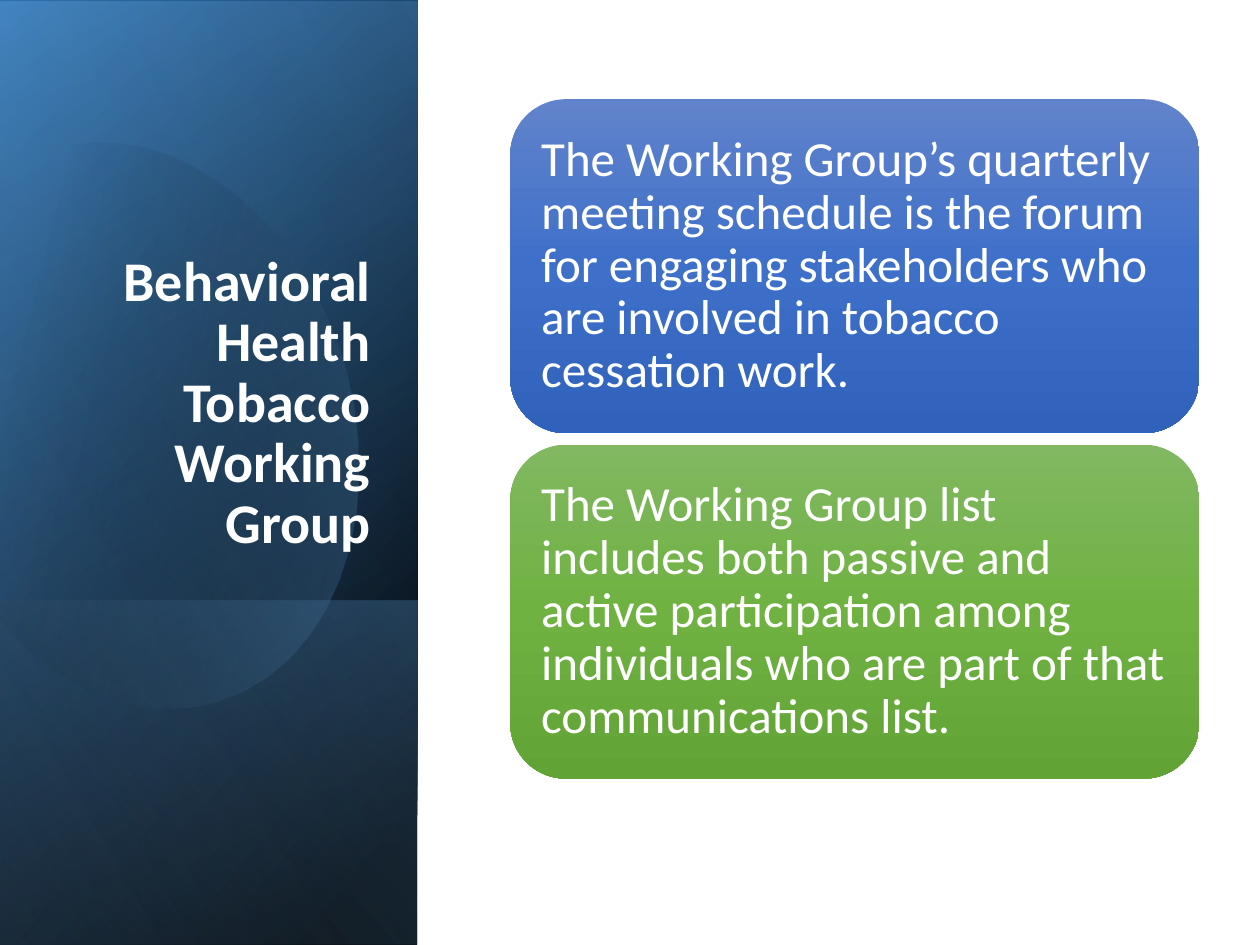
from math import cos, radians, sin

from pptx import Presentation
from pptx.dml.color import RGBColor
from pptx.enum.shapes import MSO_SHAPE
from pptx.enum.text import MSO_ANCHOR, MSO_AUTO_SIZE, PP_ALIGN
from pptx.oxml import parse_xml
from pptx.oxml.ns import nsdecls
from pptx.util import Pt

RECT, ROUND = MSO_SHAPE.RECTANGLE, MSO_SHAPE.ROUNDED_RECTANGLE
MIDDLE, BOTTOM = MSO_ANCHOR.MIDDLE, MSO_ANCHOR.BOTTOM
LEFT, RIGHT = PP_ALIGN.LEFT, PP_ALIGN.RIGHT
FIXED = MSO_AUTO_SIZE.NONE

HUES = {
    "black": "000000", "deep": "2E75B6", "sky": "5B9BD5", "pale": "9DC3E6",
    "white": "FFFFFF",
    "blue1": "6183CB", "blue2": "3E70CA", "blue3": "3062BB",
    "green1": "81B861", "green2": "6FB242", "green3": "62A336",
}
PANELS = [
    ((0, 0, 238.5, 540), [(8, "black", 100), (100, "deep", 100)], 50),
    ((0, 1, 238.5, 540), [(0, "black", 0), (99, "sky", 46)], 30),
    ((0, 343, 238.5, 197), [(2, "sky", 29), (100, "black", 30)], 130),
]
GLOSS = ((0, 0, 238.5, 540), [(0, "black", 0), (99, "pale", 11)], 120)
LEAF = [
    [(69, 82), (123, 88), (176, 138), (197, 209)],
    [(197, 209), (221, 297), (189, 382), (123, 401)],
    [(123, 401), (82, 413), (38, 396), (5, 360)],
    [(5, 360), (-2, 351)],
    [(-2, 351), (-18, 120)],
    [(-18, 120), (-11, 111)],
    [(-11, 111), (1, 99), (16, 90), (32, 85)],
    [(32, 85), (45, 81), (57, 81), (69, 82)],
]
PIVOT, TILT = (85.7, 240.8), -16.1
TITLE = "Behavioral Health Tobacco Working Group"
CARDS = [
    ("blue", "The Working Group’s quarterly meeting schedule is the forum for "
     "engaging stakeholders who are involved in tobacco cessation work."),
    ("green", "The Working Group list includes both passive and active "
     "participation among individuals who are part of that communications "
     "list."),
]


def curve(ends, steps=12):
    """Return the points after the start of a line or cubic Bezier."""
    if len(ends) == 2:
        return ends[1:]
    spots = []
    for i in range(1, steps + 1):
        t = i / steps
        parts = ((1 - t) ** 3, 3 * t * (1 - t) ** 2, 3 * t * t * (1 - t), t ** 3)
        spots.append(tuple(sum(w * p[k] for w, p in zip(parts, ends))
                           for k in (0, 1)))
    return spots


def turn(spot, pivot, angle):
    """Rotate a point clockwise about a pivot."""
    a, x, y = radians(angle), spot[0] - pivot[0], spot[1] - pivot[1]
    return (pivot[0] + x * cos(a) - y * sin(a),
            pivot[1] + x * sin(a) + y * cos(a))


class Deck:
    """Holds the style and the current slide."""

    def __init__(self, font):
        """Start a deck with one title slide."""
        self.font = font
        self.file = Presentation()
        self.file.slide_width, self.file.slide_height = Pt(720), Pt(540)
        self.slide = self.file.slides.add_slide(self.file.slide_layouts[5])
        self.shapes = self.slide.shapes

    def paint(self, shape, stops, angle):
        """Give a shape a gradient, no line and no shadow."""
        shape.line.fill.background()
        shape.shadow.inherit = False
        marks = "".join(
            f'<a:gs pos="{pos * 1000}"><a:srgbClr val="{HUES[hue]}">'
            f'<a:alpha val="{alpha * 1000}"/></a:srgbClr></a:gs>'
            for pos, hue, alpha in stops)
        shape.element.spPr.insert(2, parse_xml(
            f'<a:gradFill {nsdecls("a")} rotWithShape="1"><a:gsLst>{marks}'
            f'</a:gsLst><a:lin ang="{angle * 60000}" scaled="0"/></a:gradFill>'))

    def label(self, shape, text, size, align, anchor, bold=False):
        """Set white text in a shape."""
        frame = shape.text_frame
        frame.word_wrap, frame.auto_size = True, FIXED
        frame.vertical_anchor = anchor
        frame.text = text
        para = frame.paragraphs[0]
        para.alignment, para.line_spacing = align, 0.9
        font = para.font
        font.name, font.size, font.bold = self.font, Pt(size), bold
        font.color.rgb = RGBColor.from_string(HUES["white"])
        return frame

    def panel(self, box, stops, angle):
        """Add a mirrored rectangle on its side that covers the box."""
        x, y, w, h = box
        shape = self.shapes.add_shape(
            RECT, Pt(x + (w - h) / 2), Pt(y + (h - w) / 2), Pt(h), Pt(w))
        shape.rotation = 90
        shape.element.spPr.xfrm.set("flipH", "1")
        self.paint(shape, stops, angle)

    def leaf(self, parts, stops, angle):
        """Add the tilted curved outline."""
        spots = [parts[0][0]] + [p for part in parts for p in curve(part)]
        first, *rest = [tuple(Pt(v) for v in turn(p, PIVOT, -TILT))
                        for p in spots]
        pen = self.shapes.build_freeform(*first)
        pen.add_line_segments(rest)
        shape = pen.convert_to_shape()
        shape.rotation = TILT
        self.paint(shape, stops, angle)

    def title(self, text, box):
        """Fill the title and bring it to the front."""
        shape = self.shapes.title
        shape.left, shape.top, shape.width, shape.height = map(Pt, box)
        self.label(shape, text, 32, RIGHT, BOTTOM, True)
        self.shapes.element.append(shape.element)

    def card(self, text, hue, box):
        """Add a rounded card with text."""
        shape = self.shapes.add_shape(ROUND, *map(Pt, box))
        self.paint(shape, [(50 * i, f"{hue}{i + 1}", 100) for i in range(3)], 90)
        frame = self.label(shape, text, 28, LEFT, MIDDLE)
        frame.margin_left = frame.margin_right = Pt(8.4)
        frame.margin_top = frame.margin_bottom = Pt(8.4)


def main():
    """Build and save the slide."""
    deck = Deck("Calibri")
    for panel in PANELS:
        deck.panel(*panel)
    deck.leaf(LEAF, [(29, "black", 0), (100, "sky", 43)], 30)
    deck.panel(*GLOSS)
    deck.title(TITLE, (34.5, 132.5, 184.5, 188.5))
    for i, (hue, text) in enumerate(CARDS):
        deck.card(text, hue, (291.6, 56.7 + 197.4 * i, 393.8, 190.8))
    deck.file.save("out.pptx")


if __name__ == "__main__":
    main()
